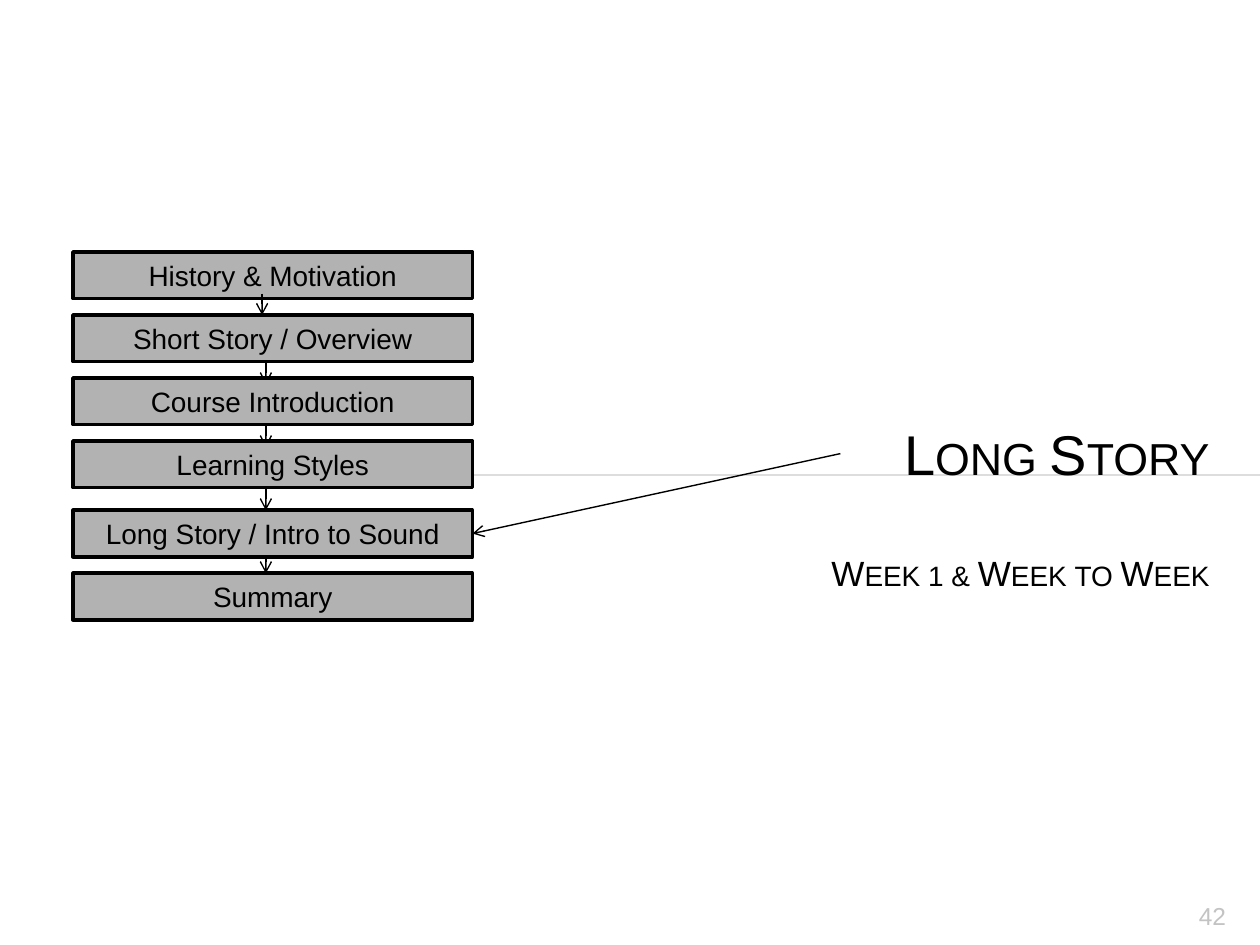
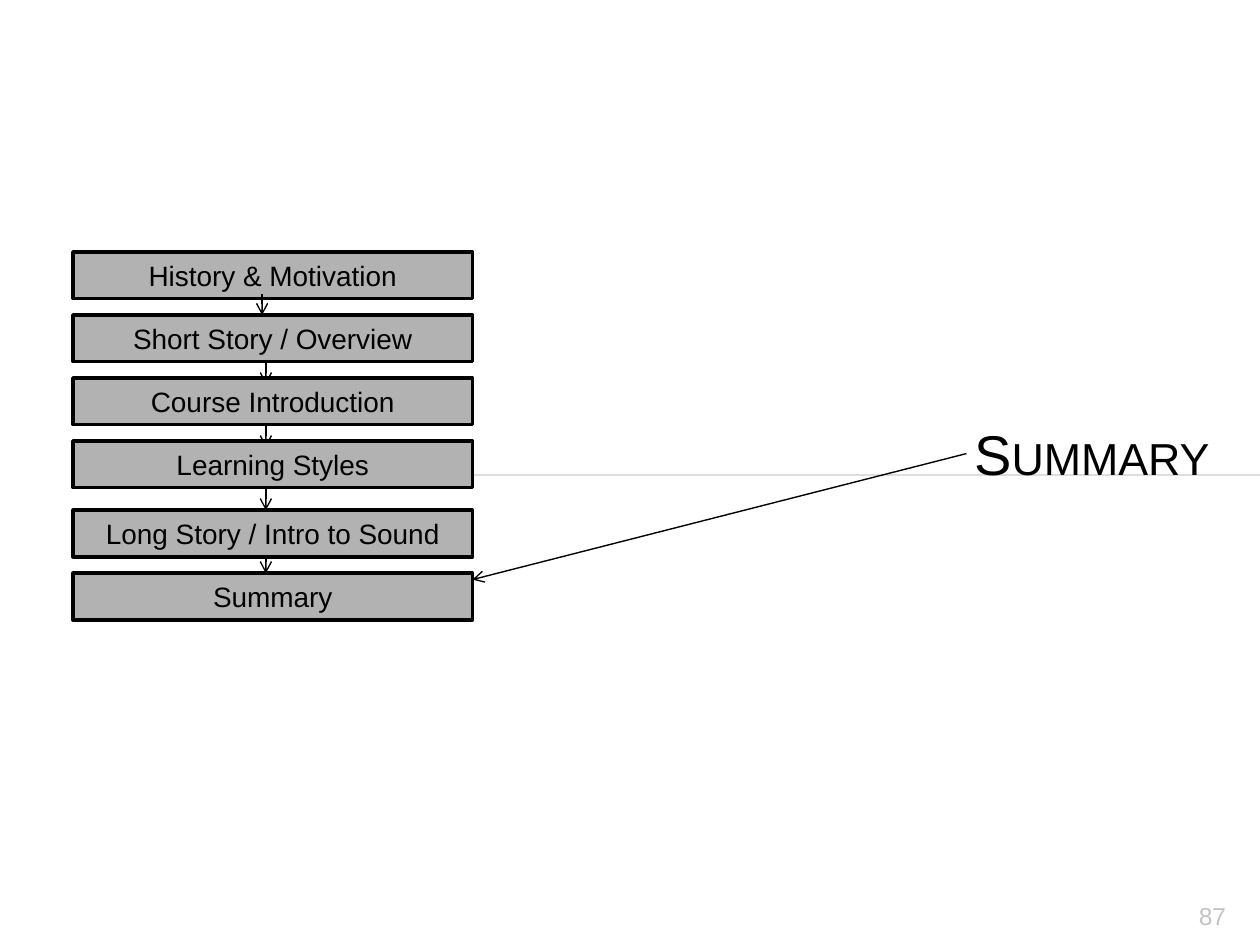
from lxml.etree import SubElement
from pptx import Presentation
from pptx.dml.color import RGBColor
from pptx.enum.shapes import MSO_CONNECTOR, MSO_SHAPE
from pptx.enum.text import MSO_ANCHOR, MSO_AUTO_SIZE, PP_ALIGN
from pptx.oxml.ns import qn
from pptx.util import Inches, Pt

COLORS = {"ink": "000000", "box": "B2B2B2", "rule": "DDDDDD", "number": "C3C3C3"}
FONT = "Arial"

TOPICS = [
    ("History & Motivation", 2),
    ("Short Story / Overview", 2.5),
    ("Course Introduction", 3),
    ("Learning Styles", 3.5),
    ("Long Story / Intro to Sound", 4.05),
    ("Summary", 4.55),
]
BOX_LEFT, BOX_WIDTH, BOX_HEIGHT = 0.58, 3.17, 0.37
ARROW_LENGTH = 0.17

SECTIONS = [
    {"title": "Long Story", "subtitle": "Week 1 & Week to Week", "number": "42",
     "pointer": (6.67, 3.6, 3.75, 4.23), "joined_topic": "Long Story / Intro to Sound"},
    {"title": "Summary", "subtitle": None, "number": "87",
     "pointer": (7.67, 3.6, 3.75, 4.6), "joined_topic": None},
]


def add_line(slide, ends, color="ink", width=0.79, arrow=True):
    line = slide.shapes.add_connector(MSO_CONNECTOR.STRAIGHT, *map(Inches, ends))
    line.line.color.rgb = RGBColor.from_string(COLORS[color])
    line.line.width = Pt(width)
    if arrow:
        SubElement(line.line._get_or_add_ln(), qn("a:tailEnd"), type="arrow")
    SubElement(line.element.spPr, qn("a:effectLst"))
    return line


def add_text(paragraph, text, size, alignment, color="ink", small_caps=False):
    paragraph.alignment = alignment
    run = paragraph.add_run()
    run.text = text
    run.font.name = FONT
    run.font.size = Pt(size)
    run.font.color.rgb = RGBColor.from_string(COLORS[color])
    if small_caps:
        run.font._element.set("cap", "small")


presentation = Presentation()
presentation.slide_width = Inches(10)
presentation.slide_height = Inches(7.5)
layout = presentation.slide_layouts[5]

for index, section in enumerate(SECTIONS):
    slide = presentation.slides.add_slide(layout)
    if index == 0:
        rule = add_line(slide, (0.56, 3.77, 10, 3.77), "rule", 0.75, arrow=False)
        layout.shapes.element.append(rule.element)

    number = slide.shapes.add_textbox(Inches(9), Inches(7.08), Inches(0.83), Inches(0.27))
    number.text_frame.word_wrap = True
    number.text_frame.margin_top = Inches(0.07)
    add_text(number.text_frame.paragraphs[0], section["number"], 14, PP_ALIGN.RIGHT, "number")

    title = slide.shapes.title
    title.left, title.top = Inches(4.92), Inches(3.22)
    title.width, title.height = Inches(4.78), Inches(0.76)
    frame = title.text_frame
    frame.auto_size = MSO_AUTO_SIZE.NONE
    frame.vertical_anchor = MSO_ANCHOR.TOP
    frame.margin_top = Inches(0.11)
    add_text(frame.paragraphs[0], section["title"], 32, PP_ALIGN.RIGHT, small_caps=True)
    if section["subtitle"]:
        subtitle = frame.add_paragraph()
        subtitle.space_before = Pt(37)
        add_text(subtitle, section["subtitle"], 20, PP_ALIGN.RIGHT, small_caps=True)

    pointer = add_line(slide, section["pointer"])
    for step in range(4):
        arrow_top = 2.88 + 0.5 * step
        add_line(slide, (2.11, arrow_top, 2.11, arrow_top + ARROW_LENGTH))

    for topic, top in TOPICS:
        box = slide.shapes.add_shape(MSO_SHAPE.RECTANGLE, Inches(BOX_LEFT), Inches(top),
                                     Inches(BOX_WIDTH), Inches(BOX_HEIGHT))
        box.shadow.inherit = False
        box.fill.solid()
        box.fill.fore_color.rgb = RGBColor.from_string(COLORS["box"])
        box.line.color.rgb = RGBColor.from_string(COLORS["ink"])
        box.line.width = Pt(2)
        box.text_frame.word_wrap = False
        box.text_frame.vertical_anchor = MSO_ANCHOR.MIDDLE
        add_text(box.text_frame.paragraphs[0], topic, 16, PP_ALIGN.CENTER)
        if topic == section["joined_topic"]:
            pointer.end_connect(box, 3)

    add_line(slide, (2.08, 2.33, 2.08, 2.33 + ARROW_LENGTH))

presentation.save("out.pptx")
